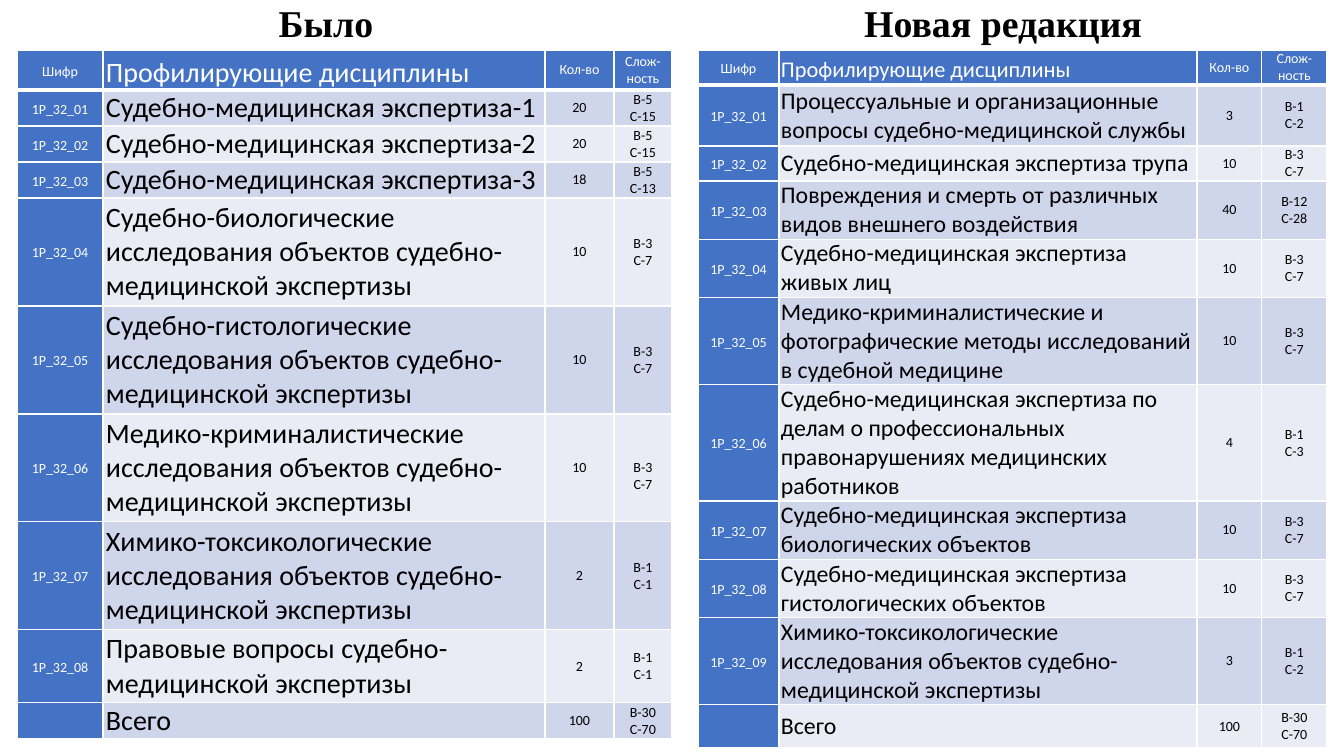
import pptx
import pptx.util
import pptx.dml.color
import pptx.enum.text
import pptx.oxml

SCALE = 914400 / 100.8
HUES = {"head": "4472C4", "odd": "CFD5EA", "even": "E9EBF5", "light": "FFFFFF", "dark": "000000"}
Pt = pptx.util.Pt
ALIGN = pptx.enum.text.PP_ALIGN
ANCHOR = pptx.enum.text.MSO_ANCHOR
NS = 'xmlns:a="http://schemas.openxmlformats.org/drawingml/2006/main"'


def px(size):
    return round(size * SCALE)


def style(item, looks):
    for name, value in looks.items():
        setattr(item, name, value)


heads = ("Шифр", "Профилирующие дисциплины", "Кол-во", "Слож-ность")
old = [
    ("Судебно-медицинская экспертиза-1", 20, 5, 15),
    ("Судебно-медицинская экспертиза-2", 20, 5, 15),
    ("Судебно-медицинская экспертиза-3", 18, 5, 13),
    ("Судебно-биологические исследования объектов судебно-медицинской экспертизы", 10, 3, 7),
    ("Судебно-гистологические исследования объектов судебно-медицинской экспертизы", 10, 3, 7),
    ("Медико-криминалистические исследования объектов судебно-медицинской экспертизы", 10, 3, 7),
    ("Химико-токсикологические исследования объектов судебно-медицинской экспертизы", 2, 1, 1),
    ("Правовые вопросы судебно-медицинской экспертизы", 2, 1, 1),
    ("Всего", 100, 30, 70),
]
new = [
    ("Процессуальные и организационные вопросы судебно-медицинской службы", 3, 1, 2),
    ("Судебно-медицинская экспертиза трупа", 10, 3, 7),
    ("Повреждения и смерть от различных видов внешнего воздействия", 40, 12, 28),
    ("Судебно-медицинская экспертиза живых лиц", 10, 3, 7),
    ("Медико-криминалистические и фотографические методы исследований в судебной медицине", 10, 3, 7),
    ("Судебно-медицинская экспертиза по делам о профессиональных правонарушениях медицинских работников", 4, 1, 3),
    ("Судебно-медицинская экспертиза биологических объектов", 10, 3, 7),
    ("Судебно-медицинская экспертиза гистологических объектов", 10, 3, 7),
    ("Химико-токсикологические исследования объектов судебно-медицинской экспертизы", 3, 1, 2),
    ("Всего", 100, 30, 70),
]
plans = [
    {"data": old, "left": 17, "cols": (86, 442, 69, 58), "pad": 3, "sizes": (20, 20),
     "rows": (40, 36, 36, 36, 108, 108, 108, 108, 73, 36), "drop": {(6, 3): 17}},
    {"data": new, "left": 698, "cols": (81, 418, 65, 65), "pad": 2, "sizes": (16, 17),
     "rows": (35, 61, 35, 58, 58, 87, 116, 58, 58, 87, 43), "drop": {}},
]

deck = pptx.Presentation()
style(deck, {"slide_width": px(1344), "slide_height": px(756)})
slide = deck.slides.add_slide(deck.slide_layouts[5])

title = slide.shapes.title
style(title, {"left": px(6), "top": px(4), "width": px(1334), "height": px(45)})
style(title.text_frame, {"margin_left": 0, "margin_right": 0, "vertical_anchor": ANCHOR.BOTTOM})
para = title.text_frame.paragraphs[0]
style(para, {"alignment": ALIGN.LEFT, "line_spacing": 0.7})
stops = "".join(f'<a:tab pos="{px(spot)}" algn="ctr"/>' for spot in (320, 997))
para._p.get_or_add_pPr().append(pptx.oxml.parse_xml(f"<a:tabLst {NS}>{stops}</a:tabLst>"))
run = para.add_run()
run.text = "\tБыло\tНовая редакция"
style(run.font, {"name": "Times New Roman", "size": Pt(27), "bold": True})
run.font.color.rgb = pptx.dml.color.RGBColor.from_string(HUES["dark"])

for plan in plans:
    lines = [heads]
    for num, (topic, count, base, hard) in enumerate(plan["data"], 1):
        code = "" if topic == "Всего" else f"1Р_32_{num:02}"
        lines.append((code, topic, str(count), f"В-{base}\nС-{hard}"))
    frame = slide.shapes.add_table(len(lines), 4, px(plan["left"]), px(50),
                                   px(sum(plan["cols"])), px(sum(plan["rows"])))
    grid = frame.table
    for col, wide in zip(grid.columns, plan["cols"]):
        col.width = px(wide)
    for row, tall in zip(grid.rows, plan["rows"]):
        row.height = px(tall)
    for y, line in enumerate(lines):
        for x, text in enumerate(line):
            cell = grid.cell(y, x)
            style(cell, {"margin_left": px(plan["pad"]), "margin_right": px(plan["pad"]),
                         "margin_top": px(plan["drop"].get((y, x), 0)), "margin_bottom": 0,
                         "vertical_anchor": ANCHOR.MIDDLE})
            for side in "LRTB":
                thick = Pt(3 if y == 0 and side == "B" else 1)
                cell._tc.get_or_add_tcPr().append(pptx.oxml.parse_xml(
                    f'<a:ln{side} {NS} w="{thick}"><a:solidFill><a:srgbClr val="{HUES["light"]}"/>'
                    f"</a:solidFill></a:ln{side}>"))
            blue = y == 0 or x == 0
            tone = "head" if blue else "odd" if y % 2 else "even"
            cell.fill.solid()
            cell.fill.fore_color.rgb = pptx.dml.color.RGBColor.from_string(HUES[tone])
            size = plan["sizes"][min(y, 1)] if x == 1 else 10
            ink = HUES["light" if blue else "dark"]
            for n, part in enumerate(text.split("\n")):
                para = cell.text_frame.add_paragraph() if n else cell.text_frame.paragraphs[0]
                style(para, {"alignment": ALIGN.LEFT if x == 1 else ALIGN.CENTER,
                             "line_spacing": 1.15 if x == 0 or (y == 0 and x == 1) else 1.0})
                run = para.add_run()
                run.text = part
                style(run.font, {"name": "Calibri", "size": Pt(size), "bold": False})
                run.font.color.rgb = pptx.dml.color.RGBColor.from_string(ink)

deck.save("out.pptx")
